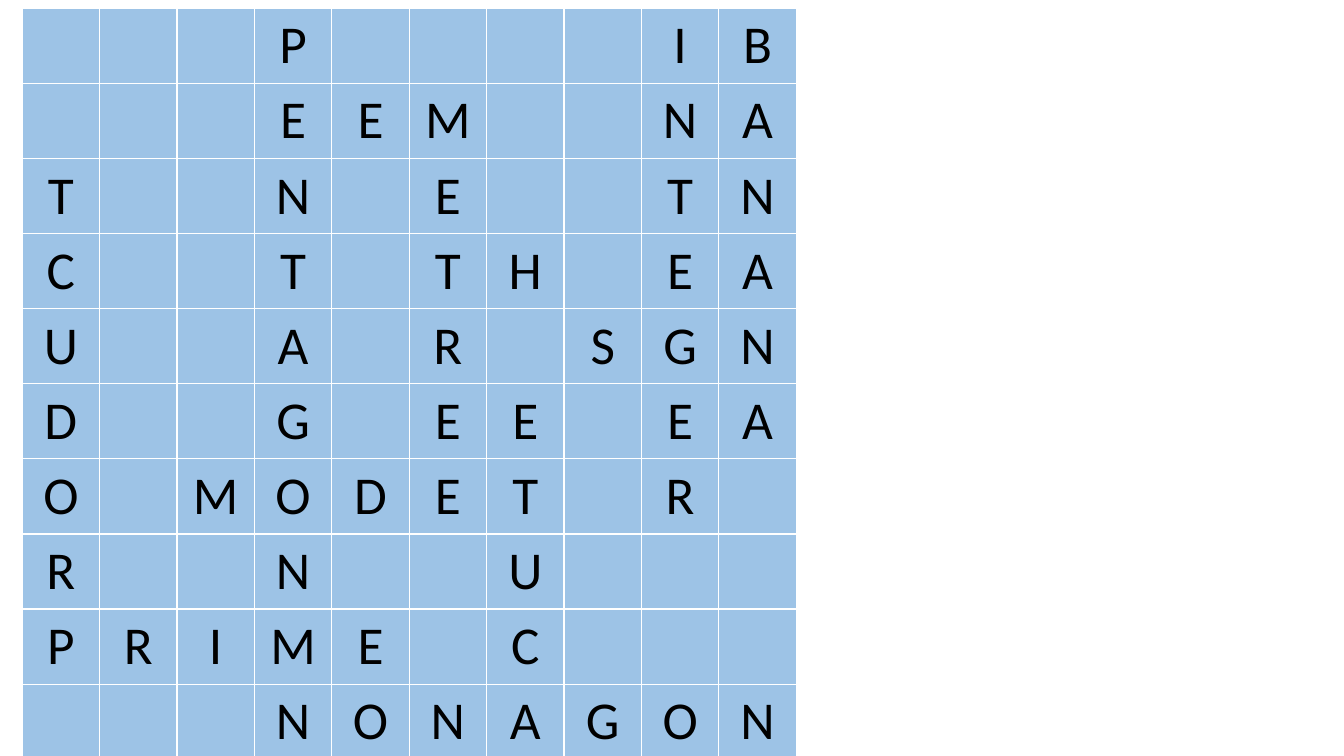
from dataclasses import dataclass

from lxml.etree import SubElement
from pptx import Presentation
from pptx.dml.color import RGBColor as RGB
from pptx.enum.text import PP_ALIGN as Align
from pptx.oxml.ns import qn
from pptx.util import Inches, Pt


@dataclass(frozen=True)
class Theme:
    """Colours, font and sizes of the slide."""
    tile: str = "9DC3E6"
    grid_line: str = "FFFFFF"
    letter: str = "000000"
    font: str = "Calibri"
    letter_size: float = 38
    line_width: float = 1


THEME = Theme()
SLIDE_SIZE = (13.33, 7.5)
PUZZLE_BOX = (0.22, 0.08, 7.68, 7.33)
ROW_HEIGHT = 0.7
PUZZLE = (
    "...P....IB",
    "...EEM..NA",
    "T..N.E..TN",
    "C..T.TH.EA",
    "U..A.R.SGN",
    "D..G.EE.EA",
    "O.MODET.R.",
    "R..N..U...",
    "PRIME.C...",
    "...NONAGON",
)


def add_borders(tile):
    """Draw a thin line on all four sides of a tile."""
    properties = tile._tc.get_or_add_tcPr()
    for side in ("lnL", "lnR", "lnT", "lnB"):
        line = SubElement(properties, qn(f"a:{side}"), w=str(Pt(THEME.line_width)))
        line_fill = SubElement(line, qn("a:solidFill"))
        SubElement(line_fill, qn("a:srgbClr"), val=THEME.grid_line)


def style_tile(tile, letter):
    """Border and fill one tile and set its letter, if it has one."""
    add_borders(tile)
    tile.fill.solid()
    tile.fill.fore_color.rgb = RGB.from_string(THEME.tile)
    if letter == ".":
        return
    tile.text = letter
    paragraph = tile.text_frame.paragraphs[0]
    paragraph.alignment = Align.CENTER
    font = paragraph.font
    font.name = THEME.font
    font.size = Pt(THEME.letter_size)
    font.color.rgb = RGB.from_string(THEME.letter)


def add_puzzle(slide, box, letter_rows):
    """Fill the box with a crossword grid, one tile per character."""
    left, top, width, height = map(Inches, box)
    frame = slide.shapes.add_table(
        len(letter_rows), len(letter_rows[0]), left, top, width, height)
    puzzle = frame.table
    puzzle.first_row = puzzle.horz_banding = False
    for row, letters in zip(puzzle.rows, letter_rows):
        row.height = Inches(ROW_HEIGHT)
        for tile, letter in zip(row.cells, letters):
            style_tile(tile, letter)
    frame.height = height


def main():
    """Build the crossword slide and save it."""
    deck = Presentation()
    deck.slide_width, deck.slide_height = map(Inches, SLIDE_SIZE)
    slide = deck.slides.add_slide(deck.slide_layouts[6])
    add_puzzle(slide, PUZZLE_BOX, PUZZLE)
    deck.save("out.pptx")


if __name__ == "__main__":
    main()
